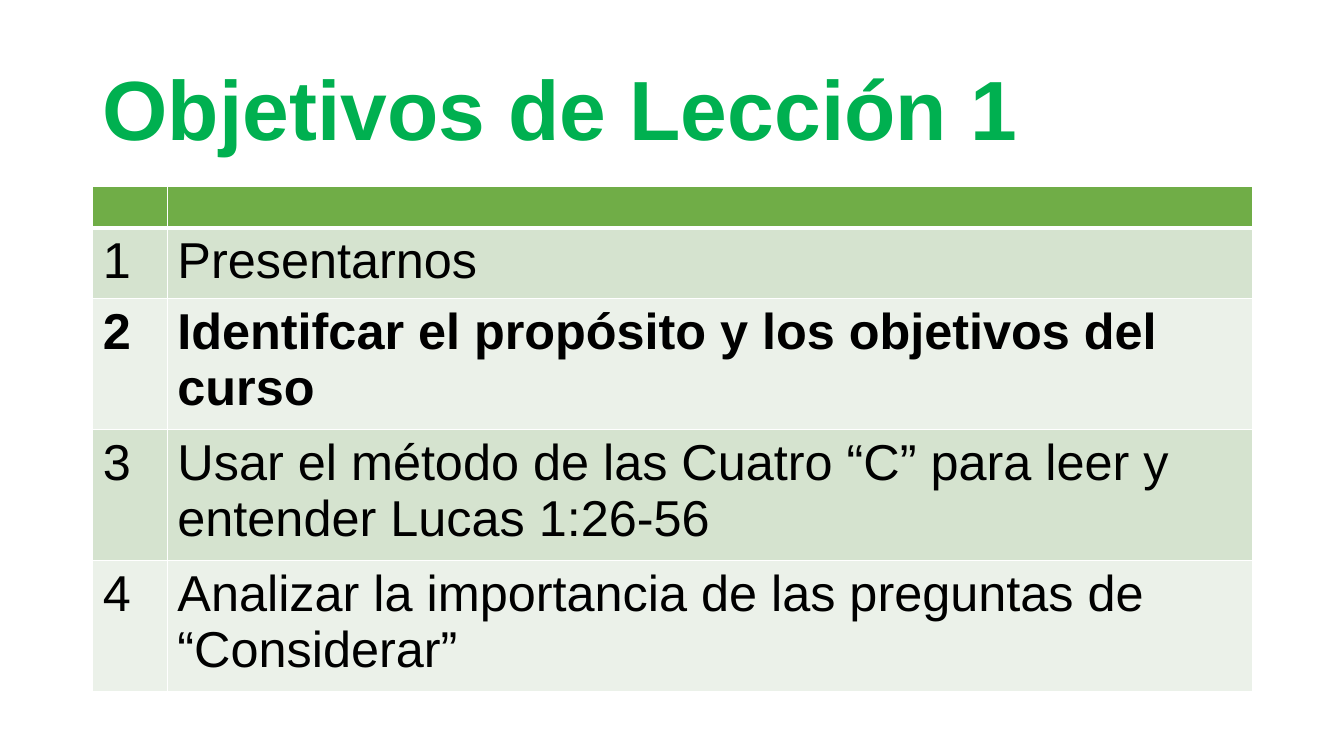
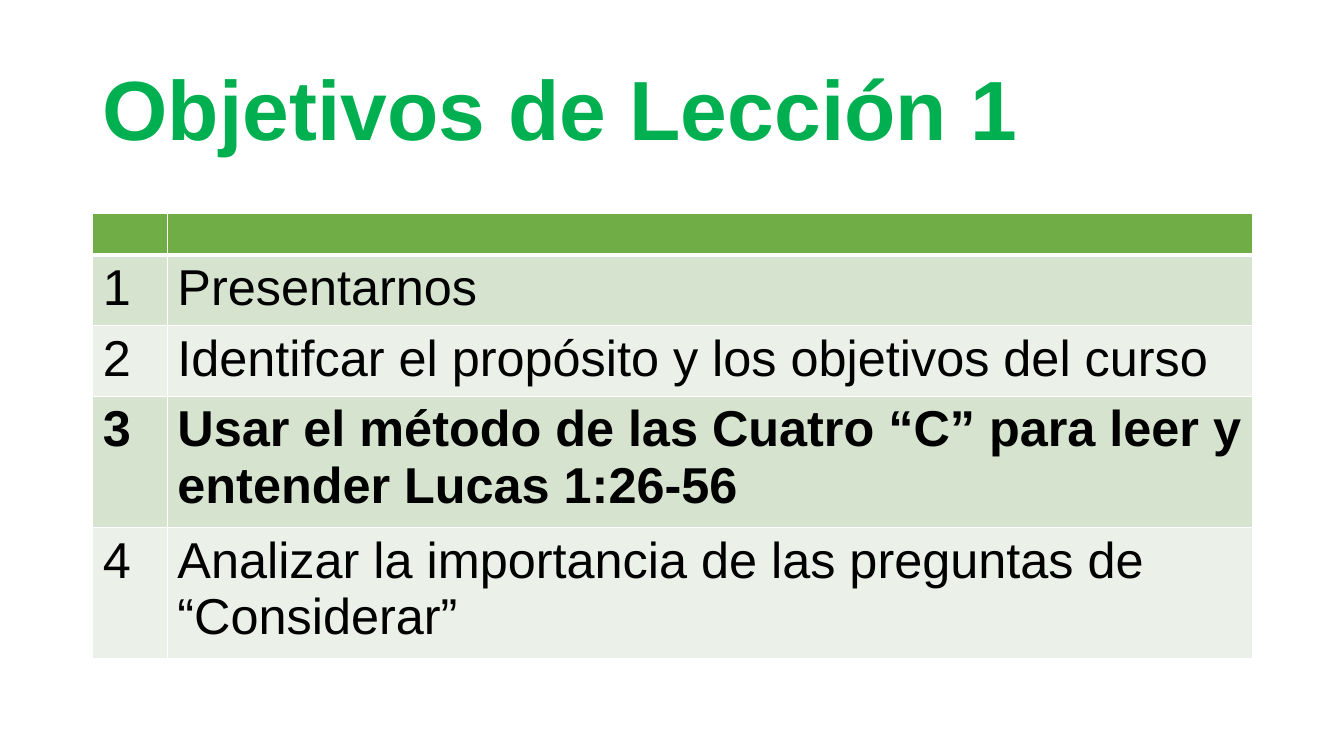
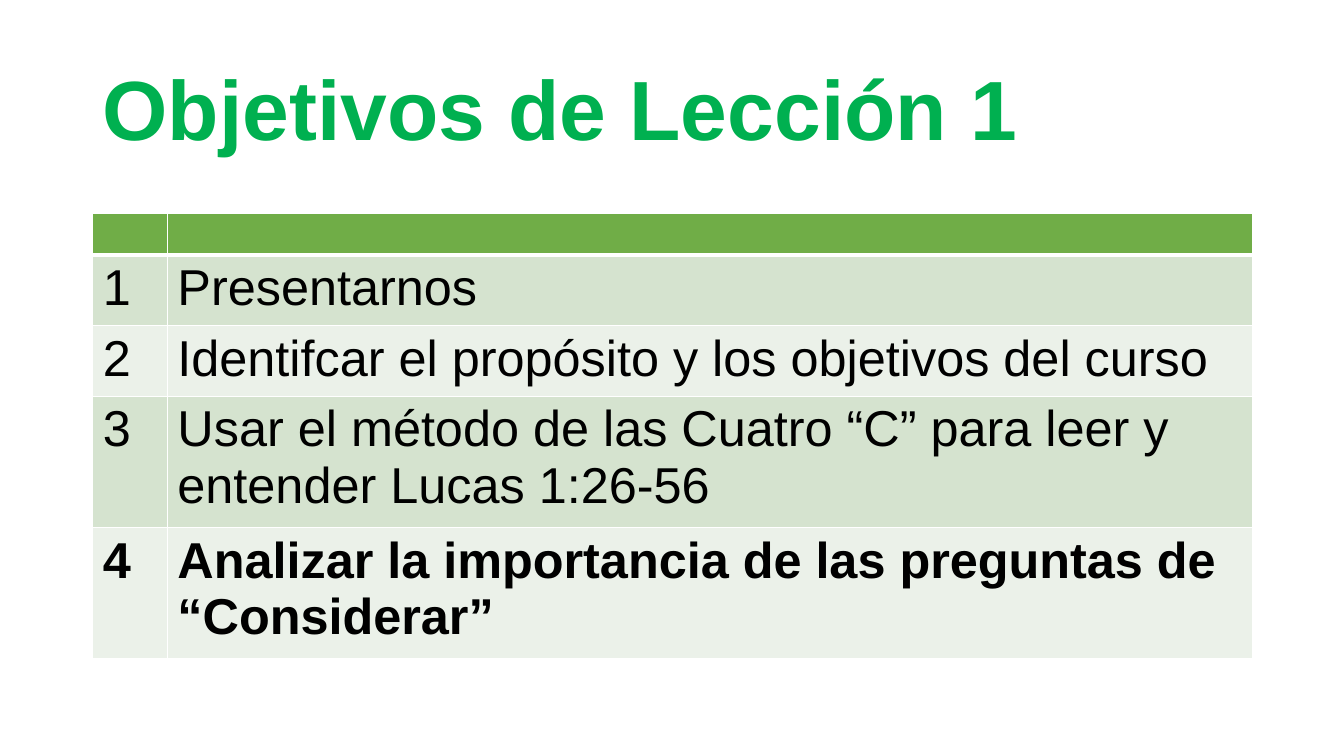
import dataclasses

import lxml.etree
import pptx
import pptx.dml.color
import pptx.enum.text
import pptx.oxml.ns
import pptx.util

Inches = pptx.util.Inches


@dataclasses.dataclass(frozen=True)
class Theme:
    font: str = "Arial"
    title_size: int = 60
    body_size: int = 36
    title: str = "00B050"
    text: str = "000000"
    header: str = "70AD47"
    bands: tuple = ("D5E3CF", "EBF1E9")
    border: str = "FFFFFF"
    thin: int = 1
    thick: int = 3


THEME = Theme()
LEFT, WIDTH = 0.92, 11.5
NUMBER_WIDTH = 0.74
ROW_HEIGHT = 0.41

TITLE = "Objetivos de Lección 1"
OBJECTIVES = (
    "Presentarnos",
    "Identifcar el propósito y los objetivos del curso",
    "Usar el método de las Cuatro “C” para leer y entender Lucas 1:26-56",
    "Analizar la importancia de las preguntas de “Considerar”",
)
# Current objective, table top, table height
SLIDES = ((2, 1.85, 5.01), (3, 2.12, 4.41), (4, 2.12, 4.41))


def rgb(value):
    return pptx.dml.color.RGBColor.from_string(value)


def write(tf, text, *, size=THEME.body_size, color=THEME.text, bold=False, spacing=None):
    """Put formatted text in the first paragraph of a text frame."""
    p = tf.paragraphs[0]
    p.line_spacing = spacing
    r = p.add_run()
    r.text = text
    r.font.name = THEME.font
    r.font.size = pptx.util.Pt(size)
    r.font.bold = bold
    r.font.color.rgb = rgb(color)


def add_title(s, text):
    sp = s.shapes.add_textbox(Inches(LEFT), Inches(0.4), Inches(WIDTH), Inches(1.45))
    tf = sp.text_frame
    tf.word_wrap = True
    tf.vertical_anchor = pptx.enum.text.MSO_ANCHOR.MIDDLE
    write(tf, text, size=THEME.title_size, color=THEME.title, bold=True, spacing=0.9)


def style_cell(cell, fill, top=THEME.thin, bottom=THEME.thin):
    """Set the borders, then the fill, in the order the schema asks for."""
    qn = pptx.oxml.ns.qn
    tcPr = cell._tc.get_or_add_tcPr()
    edges = {"a:lnL": THEME.thin, "a:lnR": THEME.thin, "a:lnT": top, "a:lnB": bottom}
    for tag, width in edges.items():
        ln = lxml.etree.SubElement(tcPr, qn(tag), w=str(pptx.util.Pt(width)))
        solid = lxml.etree.SubElement(ln, qn("a:solidFill"))
        lxml.etree.SubElement(solid, qn("a:srgbClr"), val=THEME.border)
    cell.fill.solid()
    cell.fill.fore_color.rgb = rgb(fill)


def add_objectives(s, current, top, height):
    """Add the numbered table with the current objective in bold."""
    rows = len(OBJECTIVES) + 1
    frame = s.shapes.add_table(rows, 2, Inches(LEFT), Inches(top),
                               Inches(WIDTH), Inches(rows * ROW_HEIGHT))
    table = frame.table
    table.columns[0].width = Inches(NUMBER_WIDTH)
    table.columns[1].width = Inches(WIDTH - NUMBER_WIDTH)
    # Rows keep a minimum height and grow with their text
    frame.height = Inches(height)

    for cell in table.rows[0].cells:
        style_cell(cell, THEME.header, bottom=THEME.thick)
    for number, objective in enumerate(OBJECTIVES, start=1):
        fill = THEME.bands[(number - 1) % 2]
        edge = THEME.thick if number == 1 else THEME.thin
        for cell, text in zip(table.rows[number].cells, (str(number), objective)):
            style_cell(cell, fill, top=edge)
            write(cell.text_frame, text, bold=number == current)


def main():
    prs = pptx.Presentation()
    prs.slide_width, prs.slide_height = Inches(13.33), Inches(7.5)
    for current, top, height in SLIDES:
        s = prs.slides.add_slide(prs.slide_layouts[6])
        add_title(s, TITLE)
        add_objectives(s, current, top, height)
    prs.save("out.pptx")


if __name__ == "__main__":
    main()
